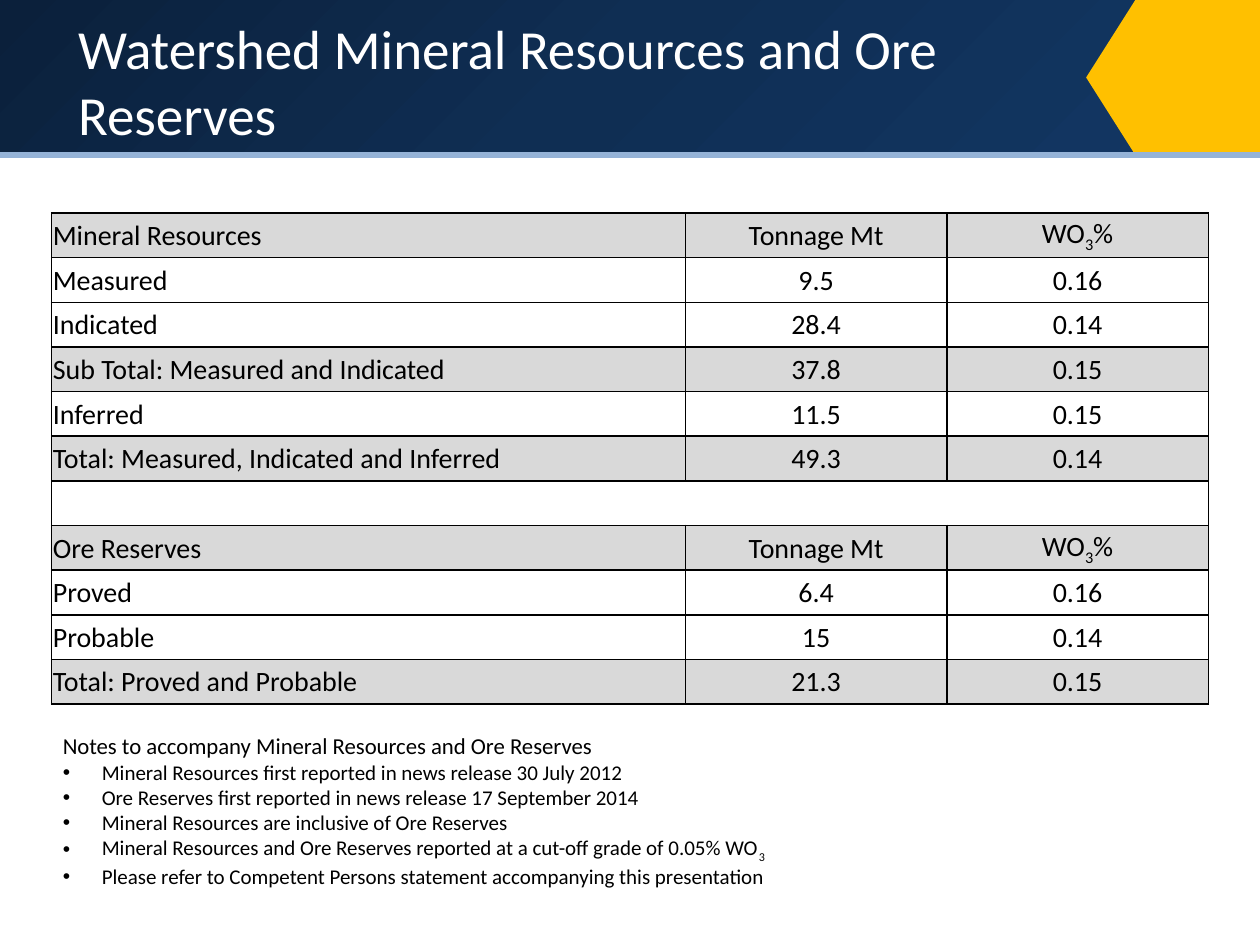
from copy import deepcopy

from lxml.etree import SubElement as Sub
from pptx import Presentation
from pptx.dml.color import RGBColor as RGB
from pptx.enum.shapes import MSO_CONNECTOR as Link, MSO_SHAPE as Kind
from pptx.enum.text import MSO_ANCHOR as Anchor, MSO_AUTO_SIZE as Fit, PP_ALIGN as Align
from pptx.oxml.ns import qn
from pptx.util import Inches, Pt

HUES = {
    "ink": "000000", "paper": "FFFFFF", "grey": "D9D9D9", "gold": "FFC000",
    "rule": "95B3D7", "deep": "0B203B", "navy": "0F2E53", "blue": "123663",
}
FONT = "Calibri"
COLS, ROWS = 100, 75
HEAD = 12.3

HEADS = ("Tonnage Mt", "WO~3~%")
TABLE = [
    ("Mineral Resources", *HEADS, "grey"),
    ("Measured", "9.5", "0.16", None),
    ("Indicated", "28.4", "0.14", None),
    ("Sub Total: Measured and Indicated", "37.8", "0.15", "grey"),
    ("Inferred", "11.5", "0.15", "paper"),
    ("Total: Measured, Indicated and Inferred", "49.3", "0.14", "grey"),
    ("", "", "", None),
    ("Ore Reserves", *HEADS, "grey"),
    ("Proved", "6.4", "0.16", None),
    ("Probable", "15", "0.14", None),
    ("Total: Proved and Probable", "21.3", "0.15", "grey"),
]
NOTES = [
    "Mineral Resources first reported in news release 30 July 2012",
    "Ore Reserves first reported in news release 17 September 2014",
    "Mineral Resources are inclusive of Ore Reserves",
    "Mineral Resources and Ore Reserves reported at a cut-off grade of 0.05% WO~3~",
    "Please refer to Competent Persons statement accompanying this presentation",
]


def hue(name):
    return RGB.from_string(HUES[name])


def write(para, text, size=16, color="ink", align=Align.LEFT, bullet=False):
    para.alignment = align
    if bullet:
        props = para._p.get_or_add_pPr()
        indent = Inches(0.31)
        props.set("marL", str(indent))
        props.set("indent", str(-indent))
        Sub(props, qn("a:buFont"), typeface="Arial")
        Sub(props, qn("a:buChar"), char="•")
    for i, part in enumerate(text.split("~")):
        if not part:
            continue
        run = para.add_run()
        run.text = part
        run.font.name, run.font.size = FONT, Pt(size)
        run.font.color.rgb = hue(color)
        if i % 2:
            run._r.get_or_add_rPr().set("baseline", "-25000")


class Page:
    def __init__(self, deck):
        self.wide, self.high = deck.slide_width, deck.slide_height
        self.slide = deck.slides.add_slide(deck.slide_layouts[5])
        self.shapes = self.slide.shapes

    def x(self, cols):
        return round(self.wide * cols / COLS)

    def y(self, rows):
        return round(self.high * rows / ROWS)

    def box(self, left, top, wide, high):
        return self.x(left), self.y(top), self.x(wide), self.y(high)

    def shape(self, kind, area, fill, turn=0):
        shape = self.shapes.add_shape(kind, *self.box(*area))
        shape.shadow.inherit = False
        shape.line.fill.background()
        shape.rotation = turn
        if isinstance(fill, str):
            shape.fill.solid()
            shape.fill.fore_color.rgb = hue(fill)
        else:
            self.blend(shape.fill, fill)

    def blend(self, fill, names):
        fill.gradient()
        fill.gradient_angle = 315
        first = fill.gradient_stops[0]._gs
        first.addnext(deepcopy(first))
        stops = fill.gradient_stops
        for i, (stop, name) in enumerate(zip(stops, names)):
            stop.position = i / (len(names) - 1)
            stop.color.rgb = hue(name)

    def line(self, start, end, color, width):
        line = self.shapes.add_connector(
            Link.STRAIGHT, self.x(start[0]), self.y(start[1]), self.x(end[0]), self.y(end[1]))
        line.line.color.rgb = hue(color)
        line.line.width = Pt(width)
        Sub(line._element.spPr, qn("a:effectLst"))

    def title(self, text, area):
        title = self.shapes.title
        title.left, title.top, title.width, title.height = self.box(*area)
        frame = title.text_frame
        frame.auto_size, frame.word_wrap = Fit.NONE, True
        frame.vertical_anchor = Anchor.MIDDLE
        write(frame.paragraphs[0], text, size=31.5, color="paper")
        self.shapes._spTree.append(title._element)

    def notes(self, head, items, area):
        frame = self.shapes.add_textbox(*self.box(*area)).text_frame
        frame.word_wrap = True
        frame.auto_size = Fit.SHAPE_TO_FIT_TEXT
        write(frame.paragraphs[0], head, size=13)
        for item in items:
            write(frame.add_paragraph(), item, size=12, bullet=True)

    def edge(self, cell, sides):
        props = cell._tc.get_or_add_tcPr()
        for side in "LRTB":
            line = Sub(props, qn("a:ln" + side), w=str(Pt(1)))
            if side in sides:
                fill = Sub(line, qn("a:solidFill"))
                Sub(fill, qn("a:srgbClr"), val=HUES["ink"])
            else:
                Sub(line, qn("a:noFill"))

    def table(self, data, area, parts):
        table = self.shapes.add_table(len(data), len(parts), *self.box(*area)).table
        table.first_row = table.horz_banding = False
        for col, part in zip(table.columns, parts):
            col.width = self.x(part)
        last = len(parts) - 1
        for row, (*texts, shade) in zip(table.rows, data):
            row.height = self.y(area[3] / len(data))
            for i, (cell, text) in enumerate(zip(row.cells, texts)):
                cell.vertical_anchor = Anchor.MIDDLE
                cell.margin_left = cell.margin_right = cell.margin_top = Inches(0.01)
                cell.margin_bottom = 0
                sides = "TB"
                if any(texts) or i == 0:
                    sides += "L"
                if any(texts) or i == last:
                    sides += "R"
                self.edge(cell, sides)
                if shade:
                    cell.fill.solid()
                    cell.fill.fore_color.rgb = hue(shade)
                else:
                    cell.fill.background()
                write(cell.text_frame.paragraphs[0], text,
                      align=Align.CENTER if i else Align.LEFT)


def main():
    deck = Presentation()
    deck.slide_width, deck.slide_height = Inches(10), Inches(7.5)
    page = Page(deck)
    page.shape(Kind.RECTANGLE, (0, 0, 95.1, HEAD), ("deep", "navy", "blue"))
    page.shape(Kind.RECTANGLE, (90.1, 0, 9.9, HEAD), "gold")
    page.shape(Kind.ISOSCELES_TRIANGLE, (82, 4.2, HEAD, 3.9), "gold", turn=270)
    page.line((0, HEAD), (COLS, HEAD), "rule", 3)
    page.title("Watershed Mineral Resources and Ore Reserves", (5.2, 1.7, 79.2, 9.4))
    page.notes("Notes to accompany Mineral Resources and Ore Reserves", NOTES,
               (4, 57.6, 70, 15.3))
    page.table(TABLE, (4.1, 16.9, 91.8, 39), (50.3, 20.75, 20.75))
    deck.save("out.pptx")


if __name__ == "__main__":
    main()
